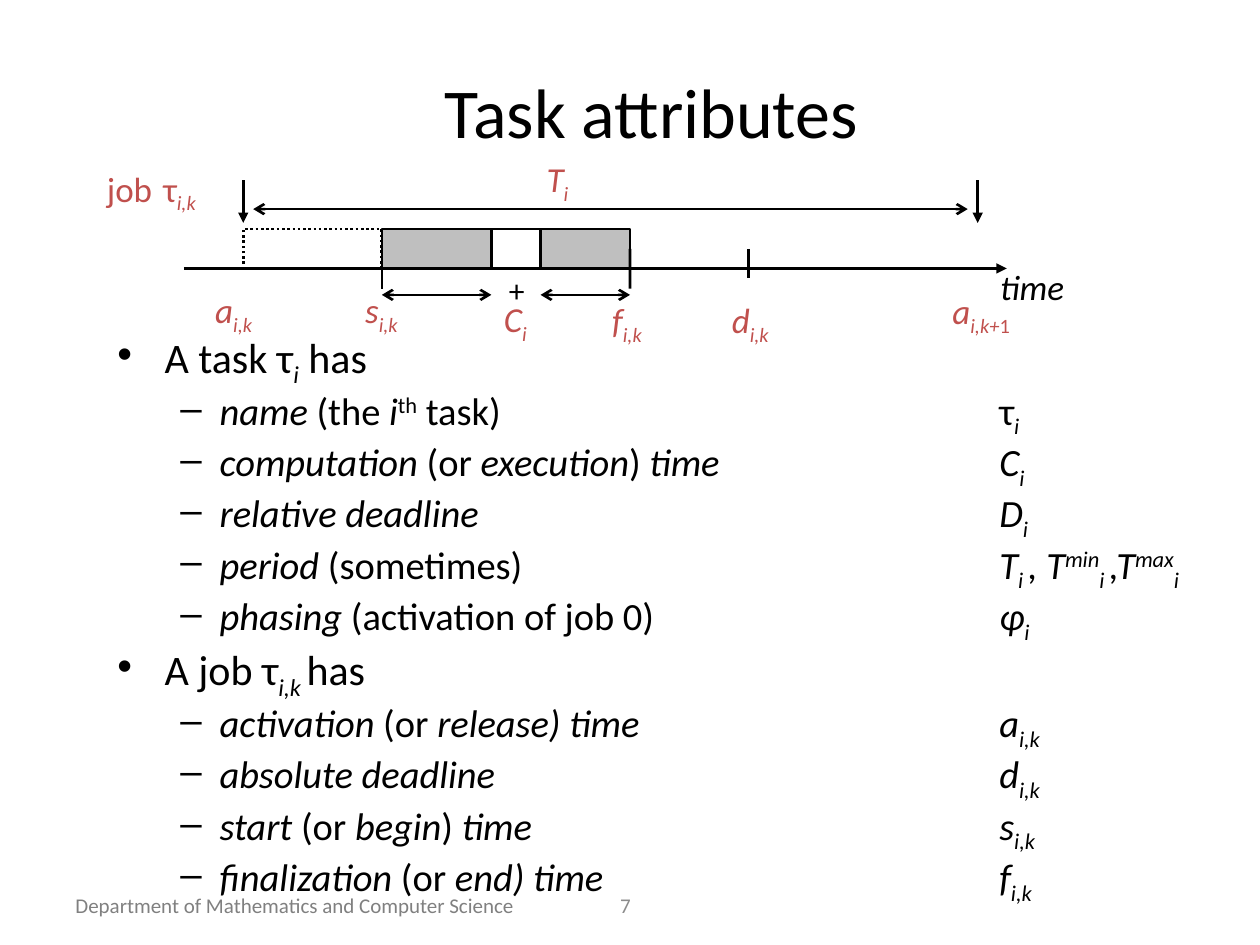
from lxml import etree
from pptx import Presentation
from pptx.dml.color import RGBColor
from pptx.enum import dml, shapes, text
from pptx.oxml import ns
from pptx.util import Pt

HUES = {"ink": "000000", "red": "C0504D", "bar": "BFBFBF", "foot": "808080", "num": "8C8C8C"}
MARKS = {".": (False, 0), "/": (True, 0), "_": (True, -25), ",": (False, -25),
         "^": (True, 30), "'": (False, 30), "~": (False, 0)}
ACT, START, STOP, BACK, END, DUE, NEXT = 139, 218.2, 280.8, 308.9, 360, 427.7, 558.7
TOP, AXIS, SPAN, TICK = 131, 153.4, 168.5, 142.2

ITEMS = [
    (0, ".A task τ|_i|. has"),
    (1, "/name|. (the |/i|'th|. task)\tτ|_i"),
    (1, "/computation |.(or |/execution|.)|/ time\tC|_i"),
    (1, "/relative deadline\tD|_i"),
    (1, "/period|. (sometimes)\t|/T|_i |/, T|^min|_i |/,T|^max|_i"),
    (1, "/phasing|. (activation of job 0)\t|/φ|_i"),
    (0, ".A job τ|_i,k |.has"),
    (1, "/activation|. (or |/release) time\ta|_i,k"),
    (1, "/absolute deadline\td|_i,k"),
    (1, "/start |.(or|/ begin|.)|/ time\ts|_i,k"),
    (1, "/finalization|. (or |/end) time\tf|_i,k"),
]

LABELS = [
    ("/time", 564.5, 148.3, 66, "ink"),
    ("/C|_i", 280.8, 166.3, 50, "red"),
    ("/T|_i|~ ", 305.3, 78.5, 50, "red"),
    ("/a|_i,k+|,1|~ ", 537.1, 154.1, 74, "red"),
    ("/a|_i,k", 115.9, 161.3, 56, "red"),
    ("/s|_i,k|~ ", 201.6, 153.4, 53, "red"),
    ("/f|_i,k", 342.7, 167, 56, "red"),
    ("/d|_i,k", 411.1, 167, 56, "red"),
]


def hue(key):
    return RGBColor.from_string(HUES[key])


def write(para, mark, size=20, color="ink", line=None, align=None):
    if line:
        para.line_spacing = line
    if align:
        para.alignment = align
    for part in mark.split("|"):
        slant, shift = MARKS[part[0]]
        run = para.add_run()
        run.text = part[1:]
        font = run.font
        font.name = "Calibri"
        font.size = Pt(28 if part[0] == "~" else size)
        font.italic = slant
        font.color.rgb = hue(color)
        if shift:
            font._element.set("baseline", str(shift * 1000))


def place(shape, x, y, w, h):
    shape.left, shape.top, shape.width, shape.height = Pt(x), Pt(y), Pt(w), Pt(h)


def label(slide, mark, x, y, w, h=32, mid=False, **style):
    frame = slide.shapes.add_textbox(Pt(x), Pt(y), Pt(w), Pt(h)).text_frame
    frame.word_wrap = True
    if mid:
        frame.vertical_anchor = text.MSO_ANCHOR.MIDDLE
    write(frame.paragraphs[0], mark, **style)


def rule(slide, x1, y1, x2, y2, head=None, tail=None):
    line = slide.shapes.add_connector(
        shapes.MSO_CONNECTOR.STRAIGHT, Pt(x1), Pt(y1), Pt(x2), Pt(y2))
    line.line.color.rgb = hue("ink")
    line.line.width = Pt(1.5)
    props = line._element.spPr
    stroke = props.find(ns.qn("a:ln"))
    for end, kind in (("a:headEnd", head), ("a:tailEnd", tail)):
        if kind:
            etree.SubElement(stroke, ns.qn(end), type=kind)
    etree.SubElement(props, ns.qn("a:effectLst"))
    return line


def block(slide, x1, x2, fill=None, dash=None):
    box = slide.shapes.add_shape(
        shapes.MSO_SHAPE.RECTANGLE, Pt(x1), Pt(TOP), Pt(x2 - x1), Pt(AXIS - TOP))
    box.shadow.inherit = False
    if fill:
        box.fill.solid()
        box.fill.fore_color.rgb = hue(fill)
    else:
        box.fill.background()
    box.line.color.rgb = hue("ink")
    box.line.width = Pt(1.5)
    if dash:
        box.line.dash_style = dash
    return box


def title(slide):
    shape = slide.shapes.title
    place(shape, 66.2, 35.3, 612, 56.2)
    shape.text_frame.auto_size = text.MSO_AUTO_SIZE.NONE
    write(shape.text_frame.paragraphs[0], ".Task attributes", size=40)


def body(slide):
    shape = slide.placeholders[1]
    place(shape, 59.8, 187.9, 650.2, 309.6)
    frame = shape.text_frame
    frame.auto_size = text.MSO_AUTO_SIZE.NONE
    for num, (level, mark) in enumerate(ITEMS):
        para = frame.add_paragraph() if num else frame.paragraphs[0]
        para.level = level
        if level:
            tabs = etree.SubElement(para._p.get_or_add_pPr(), ns.qn("a:tabLst"))
            etree.SubElement(tabs, ns.qn("a:tab"), pos=str(Pt(504)), algn="l")
        write(para, mark, size=22 if level else 24, line=0.83)


def chart(slide):
    for mark, x, y, wide, color in LABELS:
        label(slide, mark, x, y, wide, color=color)
    label(slide, ".job|~ |.τ|_i,k|~ ", 54, 85.7, 99, 40, color="red", line=0.93)
    rule(slide, 105.1, AXIS, 575.3, AXIS, tail="triangle")
    for x in (ACT, NEXT):
        rule(slide, x, 103, x, 127.4, tail="triangle")
    block(slide, STOP, BACK)
    block(slide, START, STOP, "bar")
    last = block(slide, BACK, END, "bar")
    for x1, x2, y in ((START, STOP, SPAN), (BACK, END, SPAN), (144.7, 553, 119.5)):
        rule(slide, x1, y, x2, y, head="arrow", tail="arrow")
    rule(slide, START, 148.3, START, 164.9)
    rule(slide, END, TICK, END, 164.9).begin_connect(last, 3)
    rule(slide, DUE, TICK, DUE, 159.1)
    block(slide, ACT, START, dash=dml.MSO_LINE.ROUND_DOT)
    label(slide, ".+", 283.7, 151.2, 30, 29, size=18)


def main():
    deck = Presentation()
    deck.slide_width, deck.slide_height = Pt(720), Pt(540)
    slide = deck.slides.add_slide(deck.slide_layouts[1])
    label(slide, ".Department of Mathematics and Computer Science",
          36, 506.2, 282.2, 21.6, size=12, color="foot")
    title(slide)
    body(slide)
    chart(slide)
    label(slide, ".7", 318.2, 506.2, 78.5, 21.6, mid=True,
          size=12, color="num", align=text.PP_ALIGN.CENTER)
    deck.save("out.pptx")


if __name__ == "__main__":
    main()
